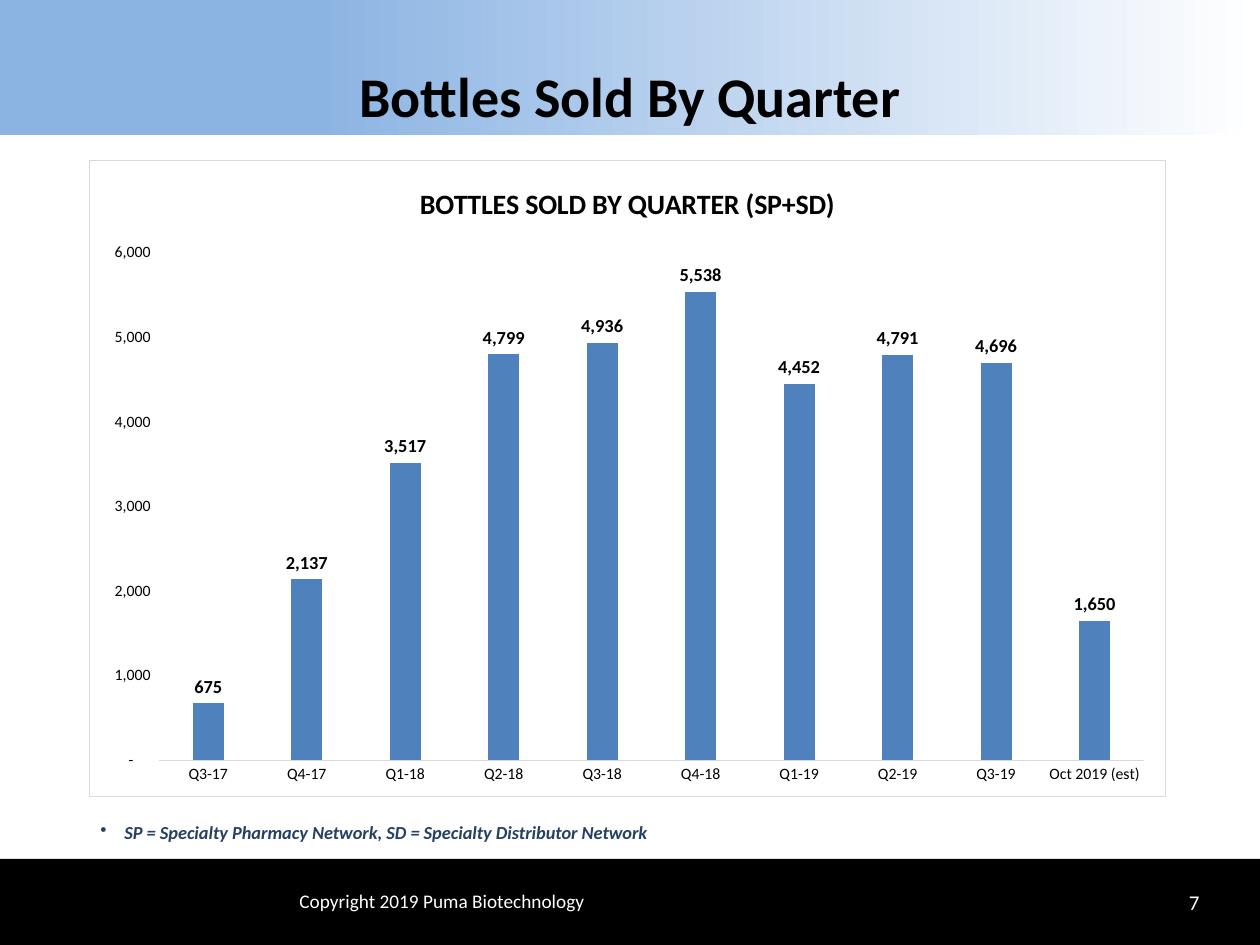
import dataclasses

import lxml.etree
import pptx
import pptx.chart.data
import pptx.dml.color
import pptx.enum.chart
import pptx.enum.shapes
import pptx.enum.text
import pptx.oxml
import pptx.oxml.ns
import pptx.util

EMU_PER_PX = 914400 / 126
FONT = "Calibri"
COLORS = {
    "black": "000000",
    "white": "FFFFFF",
    "sky": "8CB4E3",
    "navy": "254061",
    "bar": "4F81BD",
    "rule": "D9D9D9",
}
NUMBER_FORMAT = '_(* #,##0_);_(* \\(#,##0\\);_(* "-"??_);_(@_)'
BOTTLES = {
    "Q3-17": 675,
    "Q4-17": 2137,
    "Q1-18": 3517,
    "Q2-18": 4799,
    "Q3-18": 4936,
    "Q4-18": 5538,
    "Q1-19": 4452,
    "Q2-19": 4791,
    "Q3-19": 4696,
    "Oct 2019 (est)": 1650,
}
ALIGN = pptx.enum.text.PP_ALIGN
ANCHOR = pptx.enum.text.MSO_ANCHOR


@dataclasses.dataclass(frozen=True)
class Box:
    x: int
    y: int
    w: int
    h: int

    def emu(self) -> tuple[int, ...]:
        return tuple(px(v) for v in (self.x, self.y, self.w, self.h))


@dataclasses.dataclass(frozen=True)
class Label:
    box: Box
    text: str
    size: float
    color: str = "white"
    bold: bool = False
    italic: bool = False
    align: ALIGN = ALIGN.LEFT
    anchor: ANCHOR = ANCHOR.TOP
    bullet_indent: int = 0


LABELS = [
    Label(Box(1124, 877, 88, 50), "7", 12, align=ALIGN.RIGHT, anchor=ANCHOR.MIDDLE),
    Label(Box(287, 883, 321, 37), "Copyright 2019 Puma Biotechnology", 11),
    Label(Box(88, 815, 1047, 35),
          "SP = Specialty Pharmacy Network, SD = Specialty Distributor Network",
          10.5, "navy", bold=True, italic=True, bullet_indent=24),
]


def px(n: int) -> int:
    return round(n * EMU_PER_PX)


def rgb(name: str) -> pptx.dml.color.RGBColor:
    return pptx.dml.color.RGBColor.from_string(COLORS[name])


def style_font(font, size: float, color: str = "black", bold: bool = False,
               italic: bool = False) -> None:
    font.name = FONT
    font.size = pptx.util.Pt(size)
    font.bold = bold
    font.italic = italic
    font.color.rgb = rgb(color)


def write(tf, label: Label) -> None:
    tf.word_wrap = True
    tf.vertical_anchor = label.anchor
    p = tf.paragraphs[0]
    p.alignment = label.align
    if label.bullet_indent:
        pPr = p._p.get_or_add_pPr()
        pPr.set("marL", str(px(label.bullet_indent)))
        pPr.set("indent", str(-px(label.bullet_indent)))
        bu = lxml.etree.SubElement(pPr, pptx.oxml.ns.qn("a:buChar"))
        bu.set("char", "•")
    r = p.add_run()
    r.text = label.text
    style_font(r.font, label.size, label.color, label.bold, label.italic)


def add_label(s, label: Label) -> None:
    write(s.shapes.add_textbox(*label.box.emu()).text_frame, label)


def add_band(s, box: Box):
    sp = s.shapes.add_shape(pptx.enum.shapes.MSO_SHAPE.RECTANGLE, *box.emu())
    sp.shadow.inherit = False
    sp.line.fill.background()
    return sp


def add_title(s) -> None:
    box = Box(0, 0, 1260, 135)
    sp = add_band(s, box)
    sp.fill.gradient()
    sp.fill.gradient_angle = 0
    for stop, (pos, color) in zip(sp.fill.gradient_stops, [(0.25, "sky"), (1, "white")]):
        stop.position = pos
        stop.color.rgb = rgb(color)
    tf = sp.text_frame
    tf.margin_left = tf.margin_right = px(63)
    write(tf, Label(box, "Bottles Sold By Quarter", 32, "black", bold=True,
                    align=ALIGN.CENTER, anchor=ANCHOR.BOTTOM))


def add_chart(s, box: Box) -> None:
    xl = pptx.enum.chart
    data = pptx.chart.data.CategoryChartData(number_format=NUMBER_FORMAT)
    data.categories = list(BOTTLES)
    data.add_series("Series 1", list(BOTTLES.values()))
    chart = s.shapes.add_chart(xl.XL_CHART_TYPE.COLUMN_CLUSTERED, *box.emu(), data).chart
    style_font(chart.font, 10)
    chart.has_legend = False

    chart.has_title = True
    r = chart.chart_title.text_frame.paragraphs[0].add_run()
    r.text = "BOTTLES SOLD BY QUARTER (SP+SD)"
    style_font(r.font, 16, bold=True)
    chart.chart_title.include_in_layout = False

    for axis in (chart.category_axis, chart.value_axis):
        axis.has_major_gridlines = False
        axis.major_tick_mark = axis.minor_tick_mark = xl.XL_TICK_MARK.NONE
        style_font(axis.tick_labels.font, 9)
    chart.category_axis.format.line.color.rgb = rgb("rule")
    chart.category_axis.format.line.width = pptx.util.Pt(0.75)
    chart.value_axis.format.line.fill.background()
    chart.value_axis.minimum_scale = 0
    chart.value_axis.maximum_scale = 6000
    chart.value_axis.major_unit = 1000
    chart.value_axis.tick_labels.number_format = NUMBER_FORMAT
    chart.value_axis.tick_labels.number_format_is_linked = False

    plot = chart.plots[0]
    plot.vary_by_categories = False
    plot.gap_width = 219
    plot.overlap = -27
    series = plot.series[0]
    series.format.fill.solid()
    series.format.fill.fore_color.rgb = rgb("bar")
    labels = series.data_labels
    labels.show_value = True
    labels.position = xl.XL_LABEL_POSITION.OUTSIDE_END
    labels.number_format = NUMBER_FORMAT
    labels.number_format_is_linked = False
    style_font(labels.font, 10.5, bold=True)

    frame = pptx.oxml.parse_xml(
        f'<c:spPr {pptx.oxml.ns.nsdecls("c", "a")}>'
        f'<a:solidFill><a:srgbClr val="{COLORS["white"]}"/></a:solidFill>'
        f'<a:ln w="{pptx.util.Pt(0.75)}"><a:solidFill>'
        f'<a:srgbClr val="{COLORS["rule"]}"/></a:solidFill></a:ln></c:spPr>')
    chart._chartSpace.find(pptx.oxml.ns.qn("c:chart")).addnext(frame)


def main() -> None:
    prs = pptx.Presentation()
    prs.slide_width, prs.slide_height = px(1260), px(945)
    s = prs.slides.add_slide(prs.slide_layouts[6])
    footer = add_band(s, Box(0, 859, 1260, 86))
    footer.fill.solid()
    footer.fill.fore_color.rgb = rgb("black")
    add_title(s)
    for label in LABELS:
        add_label(s, label)
    add_chart(s, Box(89, 160, 1077, 637))
    prs.save("out.pptx")


if __name__ == "__main__":
    main()
